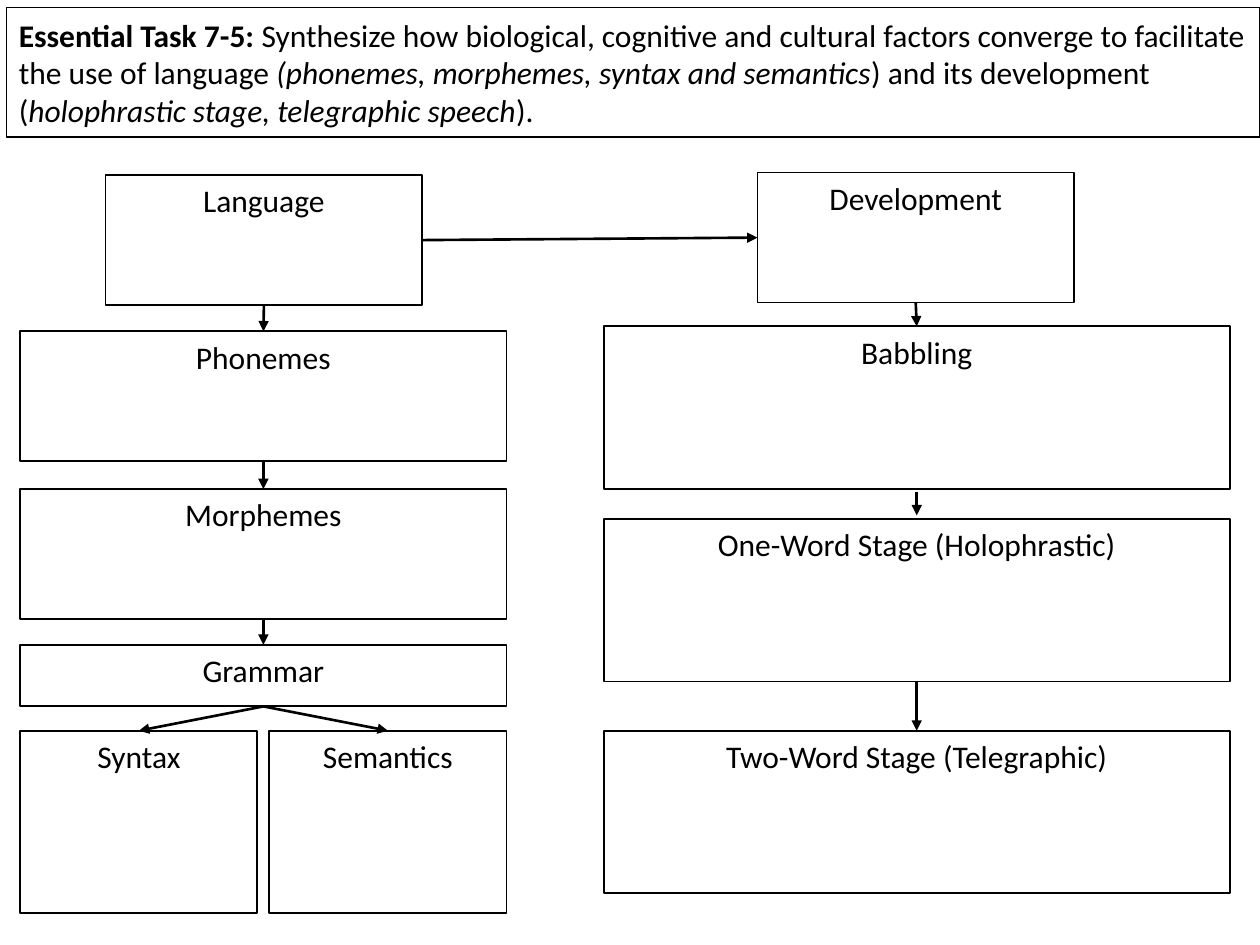
from lxml import etree
from pptx import Presentation
from pptx.dml.color import RGBColor
from pptx.enum import shapes, text
from pptx.oxml import ns
from pptx.util import Cm, Pt

COLORS = {"ink": "000000", "paper": "FFFFFF"}
FONT = "Calibri"
TOP, LEFT, BOTTOM, RIGHT = range(4)  # connection sites of a rectangle

TASK = [
    ("Essential Task 7-5: ", {"bold": True}),
    ("Synthesize how biological, cognitive and cultural factors converge "
     "to facilitate the use of language ", {}),
    ("(phonemes, morphemes, syntax and semantics", {"italic": True}),
    (") and its development (", {}),
    ("holophrastic stage, telegraphic speech", {"italic": True}),
    (").", {}),
]

# Label: left, top, width, height in cm
BOXES = {
    "Language": (2.13, 3.53, 6.38, 2.62),
    "Phonemes": (0.41, 6.68, 9.8, 2.62),
    "Morphemes": (0.41, 9.86, 9.8, 2.62),
    "Grammar": (0.41, 13, 9.8, 1.24),
    "Syntax": (0.41, 14.73, 4.78, 3.68),
    "Semantics": (5.43, 14.73, 4.78, 3.68),
    "Development": (15.27, 3.48, 6.38, 2.62),
    "Babbling": (12.17, 6.58, 12.62, 3.28),
    "One-Word Stage (Holophrastic)": (12.17, 10.46, 12.62, 3.28),
    "Two-Word Stage (Telegraphic)": (12.17, 14.73, 12.62, 3.28),
}

DOWNWARD = [
    ("Language", "Phonemes"),
    ("Phonemes", "Morphemes"),
    ("Morphemes", "Grammar"),
    ("Grammar", "Syntax"),
    ("Grammar", "Semantics"),
    ("Development", "Babbling"),
    ("One-Word Stage (Holophrastic)", "Two-Word Stage (Telegraphic)"),
]


def rgb(name):
    return RGBColor.from_string(COLORS[name])


def add_run(p, content, size=18, color="ink", bold=False, italic=False):
    r = p.add_run()
    r.text = content
    r.font.name, r.font.size = FONT, Pt(size)
    r.font.bold, r.font.italic = bold, italic
    r.font.color.rgb = rgb(color)


def add_box(s, place, runs, align=text.PP_ALIGN.CENTER,
            anchor=text.MSO_ANCHOR.TOP):
    sp = s.shapes.add_shape(shapes.MSO_SHAPE.RECTANGLE, *map(Cm, place))
    sp.shadow.inherit = False
    sp.fill.solid()
    sp.fill.fore_color.rgb = rgb("paper")
    sp.line.color.rgb = rgb("ink")
    sp.line.width = Pt(1)
    tf = sp.text_frame
    tf.word_wrap = True
    tf.vertical_anchor = anchor
    p = tf.paragraphs[0]
    p.alignment = align
    for content, style in runs:
        add_run(p, content, **style)
    return sp


def add_arrow(s, x1=0, y1=0, x2=0, y2=0):
    c = s.shapes.add_connector(shapes.MSO_CONNECTOR.STRAIGHT, x1, y1, x2, y2)
    c.line.color.rgb = rgb("ink")
    c.line.width = Pt(1.5)
    etree.SubElement(c.line._get_or_add_ln(), ns.qn("a:tailEnd"), type="triangle")
    etree.SubElement(c._element.spPr, ns.qn("a:effectLst"))
    return c


def link(s, start, end, start_site=BOTTOM, end_site=TOP):
    """Draw an arrow glued to two boxes."""
    c = add_arrow(s)
    c.begin_connect(start, start_site)
    c.end_connect(end, end_site)


def main():
    prs = Presentation()
    prs.slide_width, prs.slide_height = Cm(25.4), Cm(19.05)
    s = prs.slides.add_slide(prs.slide_layouts[6])

    add_box(s, (0.13, 0.15, 25.27, 2.62), TASK,
            align=text.PP_ALIGN.LEFT, anchor=text.MSO_ANCHOR.MIDDLE)
    boxes = {label: add_box(s, place, [(label, {})])
             for label, place in BOXES.items()}

    for start, end in DOWNWARD:
        link(s, boxes[start], boxes[end])
    link(s, boxes["Language"], boxes["Development"], RIGHT, LEFT)
    # This arrow stands free between its two boxes
    add_arrow(s, Cm(18.48), Cm(9.91), Cm(18.48), Cm(10.39))

    prs.save("out.pptx")


if __name__ == "__main__":
    main()
